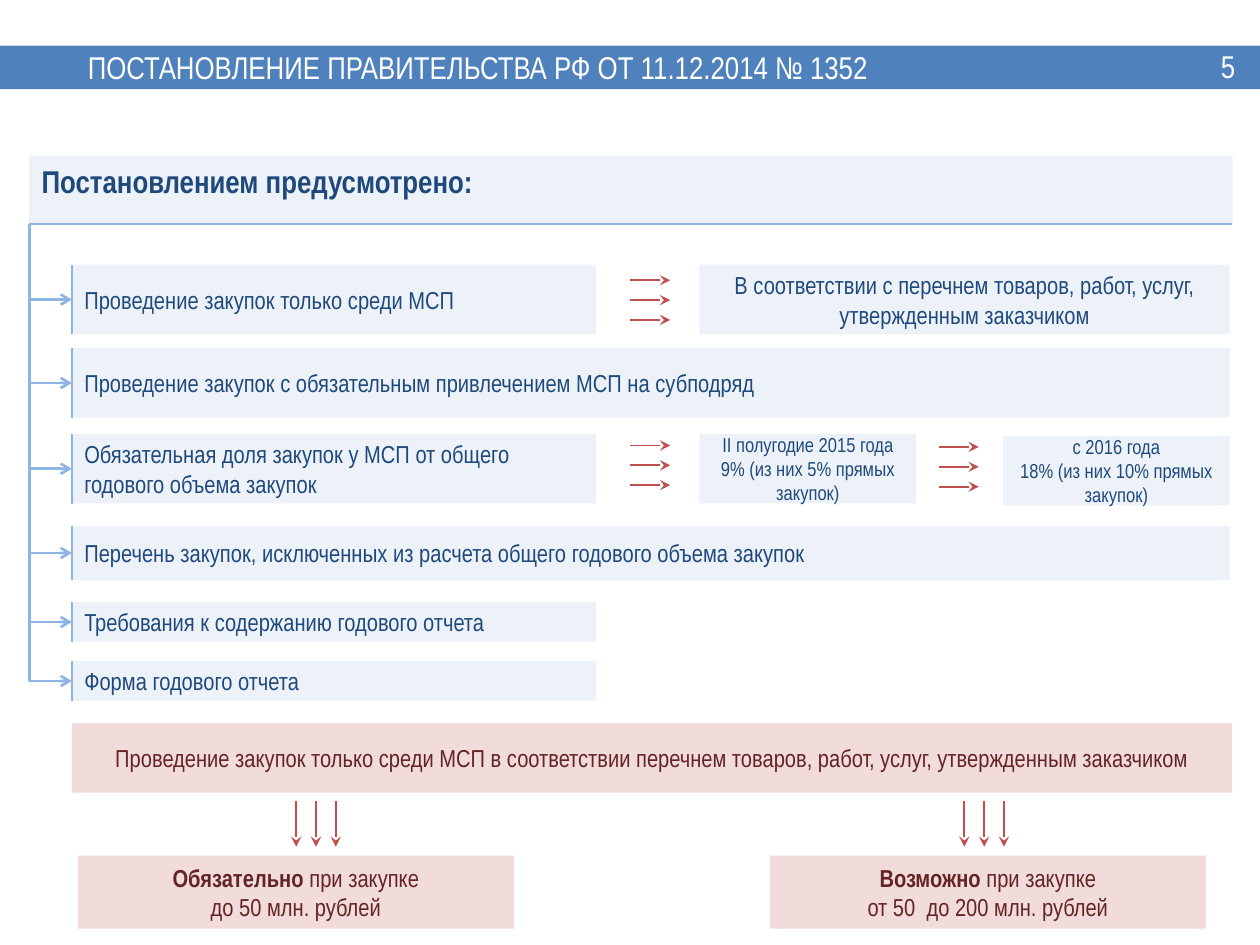
from lxml import etree
from pptx import Presentation
from pptx import util as u
from pptx.dml.color import RGBColor
from pptx.enum import shapes, text
from pptx.oxml import ns

WHITE = RGBColor(0xFF, 0xFF, 0xFF)
BAND = RGBColor(0x4F, 0x81, 0xBD)
PALE = RGBColor(0xDC, 0xE6, 0xF2)
NAVY = RGBColor(0x1F, 0x49, 0x7D)
SKY = RGBColor(0x8E, 0xB4, 0xE3)
PINK = RGBColor(0xE6, 0xB9, 0xB8)
WINE = RGBColor(0x63, 0x25, 0x23)
RED = RGBColor(0xC0, 0x50, 0x4D)
FONT = "Arial Narrow"
LEFT, MID, JUST = text.PP_ALIGN.LEFT, text.PP_ALIGN.CENTER, text.PP_ALIGN.JUSTIFY

# Content: a text is a list of paragraphs, a paragraph a list of (words, bold)
TITLE = [[("ПОСТАНОВЛЕНИЕ ПРАВИТЕЛЬСТВА РФ ОТ 11.12.2014 № 1352", False)]]
PAGE = [[("5", False)]]
HEAD = [[("Постановлением предусмотрено:", True)]]
HALF, FULL = 10.57, 23.34
ROWS = [  # top, width, height, words
    (5.34, HALF, 1.4, "Проведение закупок только среди МСП"),
    (7.02, FULL, 1.4, "Проведение закупок с обязательным привлечением МСП на субподряд"),
    (8.75, HALF, 1.4, "Обязательная доля закупок у МСП от общего годового объема закупок"),
    (10.6, FULL, 1.1, "Перечень закупок, исключенных из расчета общего годового объема закупок"),
    (12.14, HALF, 0.8, "Требования к содержанию годового отчета"),
    (13.33, HALF, 0.8, "Форма годового отчета"),
]
NOTES = [  # left, top, width, size, lines
    (14.1, 5.34, 10.69, 14,
     ["В соответствии с перечнем товаров, работ, услуг, утвержденным заказчиком"]),
    (14.1, 8.75, 4.37, 11.5,
     ["II полугодие 2015 года", "9% (из них 5% прямых закупок)"]),
    (20.22, 8.79, 4.57, 11.5,
     ["с 2016 года", "18% (из них 10% прямых закупок)"]),
]
RULE = [[("Проведение закупок только среди МСП в соответствии перечнем товаров, "
          "работ, услуг, утвержденным заказчиком", False)]]
CASES = [  # left, text
    (1.57, [[("Обязательно", True), (" при закупке", False)],
            [("до 50 млн. рублей", False)]]),
    (15.52, [[("Возможно", True), (" при закупке", False)],
             [("от 50  до 200 млн. рублей", False)]]),
]
ACROSS = [(12.7, 6.05), (12.7, 9.38), (18.92, 9.41)]  # start of middle arrow
DOWN = [(6.37, 16.15), (19.84, 16.15)]
STEP = 0.4
TRUNK, EDGE, TOP = 0.59, 1.45, 4.52

deck = Presentation()
deck.slide_width, deck.slide_height = u.Cm(25.4), u.Cm(19.05)
slide = deck.slides.add_slide(deck.slide_layouts[6])


def write(shape, paras, size, color, align=LEFT, anchor=text.MSO_ANCHOR.MIDDLE):
    frame = shape.text_frame
    frame.word_wrap = True
    frame.vertical_anchor = anchor
    for i, runs in enumerate(paras):
        para = frame.paragraphs[0] if i == 0 else frame.add_paragraph()
        para.alignment = align
        for words, bold in runs:
            run = para.add_run()
            run.text = words
            run.font.name, run.font.size = FONT, u.Pt(size)
            run.font.bold, run.font.color.rgb = bold, color


def block(x, y, w, h, fill, clear=True):
    box = slide.shapes.add_shape(shapes.MSO_SHAPE.RECTANGLE,
                                 u.Cm(x), u.Cm(y), u.Cm(w), u.Cm(h))
    box.shadow.inherit = False
    box.fill.solid()
    box.fill.fore_color.rgb = fill
    box.line.fill.background()
    if clear:
        tint = box._element.spPr.find(".//" + ns.qn("a:srgbClr"))
        etree.SubElement(tint, ns.qn("a:alpha"), val="50000")
    return box


def label(x, y, w, h, paras):
    box = slide.shapes.add_textbox(u.Cm(x), u.Cm(y), u.Cm(w), u.Cm(h))
    write(box, paras, 18, WHITE)


def line(home, x1, y1, x2, y2, color, width, tip=None,
         kind=shapes.MSO_CONNECTOR.STRAIGHT):
    link = home.add_connector(kind, u.Cm(x1), u.Cm(y1), u.Cm(x2), u.Cm(y2))
    link.line.color.rgb = color
    link.line.width = u.Pt(width)
    props = link._element.spPr
    if tip:
        etree.SubElement(props.find(ns.qn("a:ln")), ns.qn("a:tailEnd"), type=tip)
    etree.SubElement(props, ns.qn("a:effectLst"))
    return link


def branch(y):
    """Elbow that runs down the trunk, then right to a row."""
    link = line(slide.shapes, TRUNK, TOP, EDGE, y, SKY, 1.5, "arrow",
                shapes.MSO_CONNECTOR.ELBOW)
    wide, tall = link.width, link.height
    link.left += (wide - tall) // 2
    link.top += (tall - wide) // 2
    link.width, link.height = tall, wide
    props = link._element.spPr
    props.find(ns.qn("a:prstGeom")).set("prst", "bentConnector2")
    frame = props.find(ns.qn("a:xfrm"))
    frame.set("rot", "16200000")
    frame.set("flipH", "1")


def trio(x, y, dx, dy):
    """Three parallel arrows, spread across their direction."""
    group = slide.shapes.add_group_shape()
    for k in (-1, 0, 1):
        a = x + (k * STEP if dy else 0)
        b = y + (k * STEP if dx else 0)
        line(group.shapes, a, b, a + dx, b + dy, RED, 1, "stealth")


# Title band
block(0, 0.92, 25.4, 0.88, BAND, clear=False)
label(1.52, 0.86, 20.98, 0.97, TITLE)
label(24.36, 0.81, 1.6, 1.02, PAGE)

# Heading
write(block(TRUNK, 3.15, 24.26, 1.38, PALE), HEAD, 18, NAVY, JUST,
      text.MSO_ANCHOR.TOP)
line(slide.shapes, 24.84, TOP, TRUNK, TOP, SKY, 1.5)

# Rows with their left rule and branch
for y, w, h, words in ROWS:
    write(block(EDGE, y, w, h, PALE), [[(words, False)]], 14, NAVY)
    line(slide.shapes, EDGE, y, EDGE, y + h, SKY, 1.5)
    branch(y + h / 2)

# Notes on the right
for x, y, w, size, lines in NOTES:
    write(block(x, y, w, 1.4, PALE), [[(words, False)] for words in lines],
          size, NAVY, MID)

# Rule and its two cases
write(block(EDGE, 14.58, 23.39, 1.4, PINK), RULE, 14, WINE, MID)
for x, paras in CASES:
    write(block(x, 17.25, 8.79, 1.47, PINK), paras, 14, WINE, MID)

# Arrow trios
for x, y in ACROSS:
    trio(x, y, 0.81, 0)
for x, y in DOWN:
    trio(x, y, 0, 0.92)

deck.save("out.pptx")
